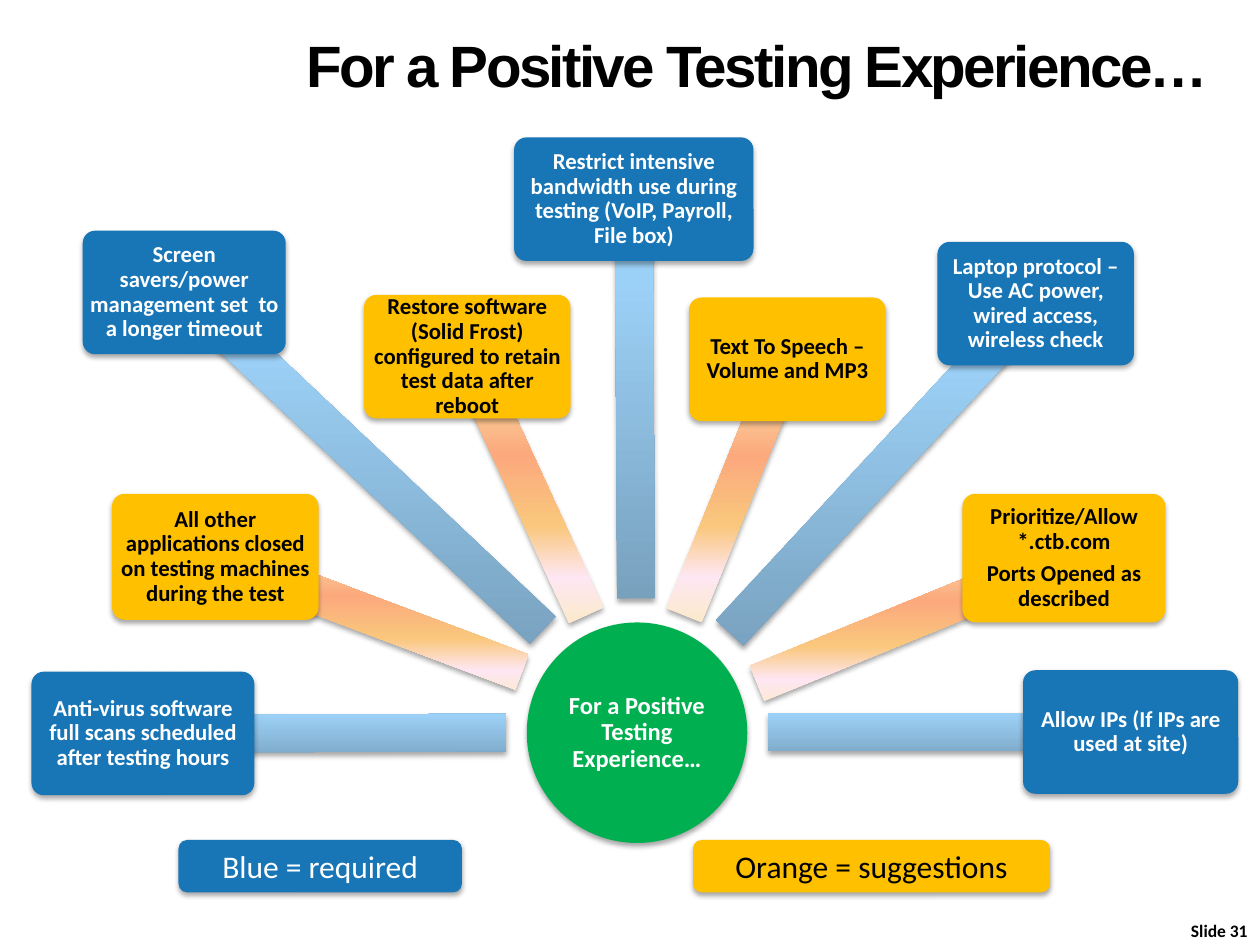
from dataclasses import dataclass
from math import cos, radians, sin

from lxml.etree import SubElement
from pptx import Presentation
from pptx.dml.color import RGBColor as RGB
from pptx.enum.shapes import MSO_SHAPE as Shape
from pptx.enum.text import MSO_ANCHOR as Anchor, MSO_AUTO_SIZE as Fit, PP_ALIGN as Align
from pptx.oxml.ns import qn
from pptx.util import Pt


@dataclass(frozen=True)
class Theme:
    blue: str = "1876B7"
    gold: str = "FFC000"
    green: str = "00B050"
    white: str = "FFFFFF"
    black: str = "000000"
    cool: tuple = ((0, "78A1BE"), (80, "9CD1F7"), (100, "9BD2FA"))
    warm: tuple = ((0, "FBEAC7"), (18, "FEE7F2"), (36, "FAC77D"),
                   (61, "FBA97D"), (82, "FBD49C"), (100, "FEE7F2"))
    head: str = "Arial"
    body: str = "Calibri"
    title: float = 33.3
    key: float = 18
    hub: float = 14
    card: float = 13
    foot: float = 10


THEME = Theme()
HEAD = "For a Positive Testing Experience…"
MUST, MAY = True, False

# Text, required or suggested, card box, spoke turn and length
CARDS = (
    ("Anti-virus software full scans scheduled after testing hours",
     MUST, (18, 383.8, 127.4, 70.6), 359.9, 207.4),
    ("All other applications closed on testing machines during the test",
     MAY, (64, 282.2, 118, 72), 20.6, 187.2),
    ("Screen savers/power management set  to a longer timeout",
     MUST, (47.3, 131.8, 116, 70.6), 43.3, 281.5),
    ("Restore software (Solid Frost) configured to retain test data after reboot",
     MAY, (208, 168.5, 118, 70.6), 65.3, 162.7),
    ("Restrict intensive bandwidth use during testing (VoIP, Payroll, File box)",
     MUST, (293.8, 78.5, 136.8, 70.6), 89.7, 228.2),
    ("Text To Speech –Volume and MP3",
     MAY, (393.8, 170, 112.3, 70.6), 112, 157.7),
    ("Laptop protocol – Use AC power, wired access, wireless check",
     MUST, (535.7, 138.2, 112.3, 70.6), 132.9, 257),
    ("Prioritize/Allow *.ctb.com\nPorts Opened as described",
     MAY, (550, 282.2, 116, 73.4), 157.8, 189.4),
    ("Allow IPs (If IPs are used at site)",
     MUST, (584.6, 383, 123, 70.6), 180, 207.4),
)


def write(shape, text, size, color, bold=True, face=THEME.body,
          align=Align.CENTER, anchor=Anchor.MIDDLE, inset=None):
    frame = shape.text_frame
    frame.text = text
    frame.word_wrap = True
    frame.auto_size = Fit.NONE
    frame.vertical_anchor = anchor
    if inset is not None:
        frame.margin_left = frame.margin_right = Pt(inset)
        frame.margin_top = frame.margin_bottom = Pt(inset)
    for para in frame.paragraphs:
        para.alignment = align
        for run in para.runs:
            font = run.font
            font.name, font.size, font.bold = face, Pt(size), bold
            font.color.rgb = RGB.from_string(color)
    return frame


def tighten(frame, size):
    for para in frame.paragraphs:
        para.line_spacing = 0.9
        para.space_after = Pt(size * 0.35)


def tint(parent, color):
    return SubElement(parent, qn("a:srgbClr"), val=color)


def add_part(slide, kind, box, fill=None):
    part = slide.shapes.add_shape(kind, *map(Pt, box))
    part.line.fill.background()
    if fill:
        part.fill.solid()
        part.fill.fore_color.rgb = RGB.from_string(fill)
    # Soft shadow straight below
    part.shadow.inherit = False
    glow = SubElement(part._element.spPr.find(qn("a:effectLst")), qn("a:outerShdw"),
                      blurRad=str(Pt(3.1)), dist=str(Pt(1.8)),
                      dir="5400000", rotWithShape="0")
    SubElement(tint(glow, THEME.black), qn("a:alpha"), val="35000")
    return part


def blend(part, stops):
    # Gradient stays upright while the shape turns
    part.fill.gradient()
    grad = part._element.spPr.find(qn("a:gradFill"))
    grad.set("rotWithShape", "0")
    for child in list(grad):
        grad.remove(child)
    row = SubElement(grad, qn("a:gsLst"))
    for pos, color in stops:
        tint(SubElement(row, qn("a:gs"), pos=str(pos * 1000)), color)
    SubElement(grad, qn("a:lin"), ang="16200000", scaled="0")


def add_title(slide, box):
    title = slide.shapes.title
    title.left, title.top, title.width, title.height = map(Pt, box)
    frame = write(title, HEAD, THEME.title, THEME.black, face=THEME.head,
                  align=Align.LEFT, anchor=Anchor.BOTTOM)
    frame.paragraphs[0].runs[0]._r.get_or_add_rPr().set("spc", "-150")


def add_hub(slide, box):
    hub = add_part(slide, Shape.OVAL, box, THEME.green)
    tighten(write(hub, HEAD, THEME.hub, THEME.white, inset=0.7), THEME.hub)


def add_spoke(slide, box, turn, length, stops, thick=36):
    # Arrow tip rests at the middle of the card
    left, top, width, height = box
    mid_x = left + width / 2 + cos(radians(turn)) * length / 2
    mid_y = top + height / 2 + sin(radians(turn)) * length / 2
    spoke = add_part(slide, Shape.LEFT_ARROW,
                     (mid_x - length / 2, mid_y - thick / 2, length, thick))
    spoke.adjustments[0] = 0.6
    spoke.rotation = turn
    blend(spoke, stops)


def add_card(slide, box, text, must):
    card = add_part(slide, Shape.ROUNDED_RECTANGLE, box,
                    THEME.blue if must else THEME.gold)
    card.adjustments[0] = 0.1
    ink = THEME.white if must else THEME.black
    tighten(write(card, text, THEME.card, ink, inset=2.2), THEME.card)


def add_key(slide, box, text, fill, ink):
    key = add_part(slide, Shape.ROUNDED_RECTANGLE, box, fill)
    write(key, text, THEME.key, ink, bold=False)


def add_foot(slide, box):
    foot = slide.shapes.add_textbox(*map(Pt, box))
    write(foot, "Slide 31", THEME.foot, THEME.black,
          align=Align.RIGHT, anchor=Anchor.TOP)


def main():
    deck = Presentation()
    deck.slide_width, deck.slide_height = Pt(720), Pt(540)
    slide = deck.slides.add_slide(deck.slide_layouts[5])

    add_title(slide, (168, 0, 552, 60))

    # Hub with its spokes and cards
    add_hub(slide, (301, 355.7, 126, 126))
    for text, must, box, turn, length in CARDS:
        add_spoke(slide, box, turn, length, THEME.cool if must else THEME.warm)
        add_card(slide, box, text, must)

    # Colour key and slide number
    add_key(slide, (102, 480, 162, 30), "Blue = required", THEME.blue, THEME.white)
    add_key(slide, (396, 480, 204, 30), "Orange = suggestions", THEME.gold, THEME.black)
    add_foot(slide, (648, 522, 72, 18))

    deck.save("out.pptx")


if __name__ == "__main__":
    main()
